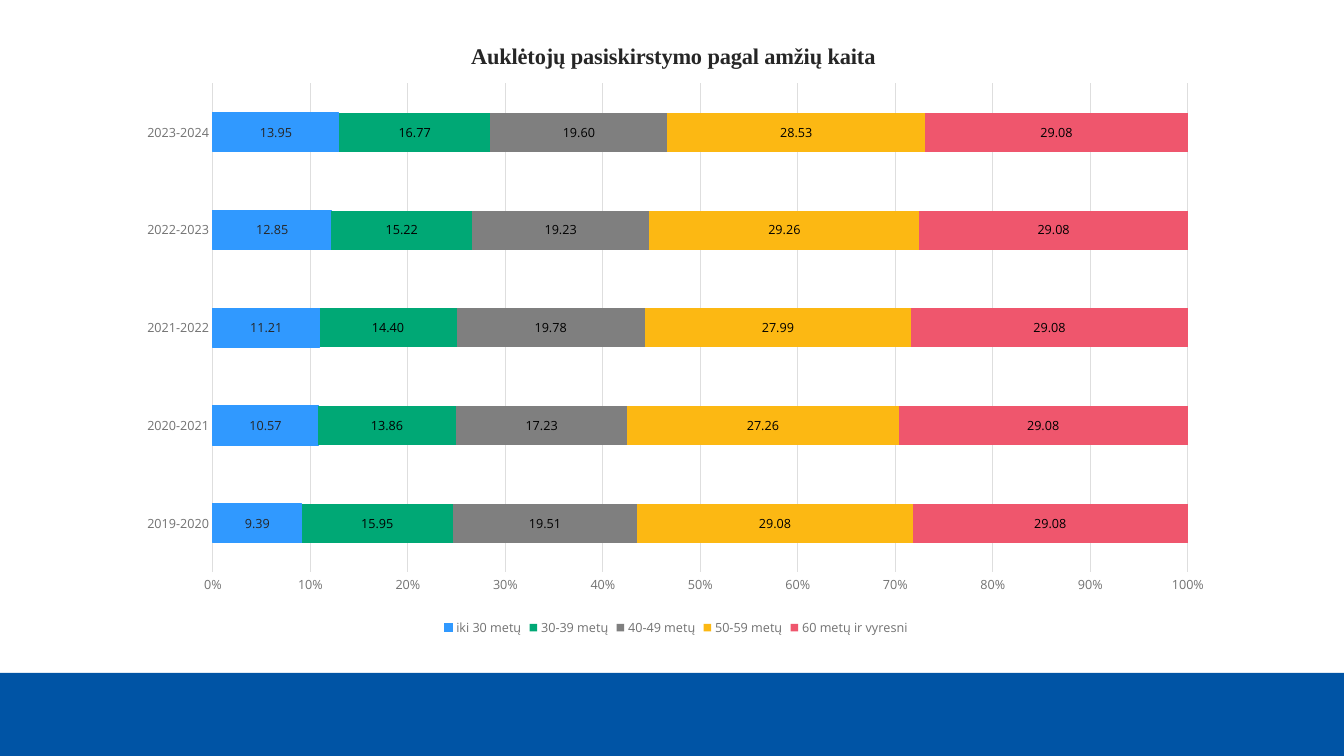
from lxml import etree
from pptx import Presentation
from pptx import util as u
from pptx.chart.data import CategoryChartData
from pptx.dml.color import RGBColor
from pptx.enum import chart as ch
from pptx.enum import shapes
from pptx.oxml.ns import qn

BLUE_BAND = RGBColor(0x00, 0x54, 0xA5)
INK = RGBColor(0x26, 0x26, 0x26)
BLACK = RGBColor(0x00, 0x00, 0x00)
MUTED = RGBColor(0x72, 0x72, 0x72)
GRID_LINE = RGBColor(0xDE, 0xDE, 0xDE)
SKY = RGBColor(0x30, 0x99, 0xFF)
GREEN = RGBColor(0x00, 0xA8, 0x75)
GREY = RGBColor(0x7F, 0x7F, 0x7F)
AMBER = RGBColor(0xFC, 0xB8, 0x13)
ROSE = RGBColor(0xEF, 0x56, 0x6D)

SCHOOL_YEARS = ["2019-2020", "2020-2021", "2021-2022", "2022-2023", "2023-2024"]
AGE_GROUPS = [
    ("iki 30 metų", SKY, INK, (9.39, 10.57, 11.21, 12.85, 13.95)),
    ("30-39 metų", GREEN, BLACK, (15.95, 13.86, 14.40, 15.22, 16.77)),
    ("40-49 metų", GREY, BLACK, (19.51, 17.23, 19.78, 19.23, 19.60)),
    ("50-59 metų", AMBER, BLACK, (29.08, 27.26, 27.99, 29.26, 28.53)),
    ("60 metų ir vyresni", ROSE, BLACK, (29.08,) * 5),
]


def apply(target, **values):
    for name, value in values.items():
        setattr(target, name, value)


def place(element, before, **shares):
    """Fix a chart part at shares of the chart's size, ahead of the first `before` tag found."""
    layout = etree.Element(qn("c:layout"))
    manual = etree.SubElement(layout, qn("c:manualLayout"))
    settings = {"xMode": "edge", "yMode": "edge", **shares}
    if "w" in shares:
        settings = {"layoutTarget": "inner", **settings}
    for tag, value in settings.items():
        etree.SubElement(manual, qn(f"c:{tag}")).set("val", str(value))
    for old in element.findall(qn("c:layout")):
        element.remove(old)
    next(child for child in element if child.tag == qn(before)).addprevious(layout)


class Deck:
    COLUMNS, ROWS = 32, 40
    BODY, HEADING = "Open Sans", "Times New Roman"

    def __init__(self):
        self.show = Presentation()
        apply(self.show, slide_width=u.Inches(13.33), slide_height=u.Inches(7.5))
        self.slide = self.show.slides.add_slide(self.show.slide_layouts[6])

    def box(self, column, row, columns, rows):
        across = self.show.slide_width / self.COLUMNS
        down = self.show.slide_height / self.ROWS
        return [u.Emu(round(n)) for n in
                (column * across, row * down, columns * across, rows * down)]

    def style(self, font, size, color, **more):
        apply(font, **{"name": self.BODY, "size": u.Pt(size), "bold": False, **more})
        font.color.rgb = color

    def stroke(self, line, color):
        line.color.rgb = color
        line.width = u.Pt(0.75)

    def band(self, cell, color):
        band = self.slide.shapes.add_shape(shapes.MSO_SHAPE.RECTANGLE, *self.box(*cell))
        band.shadow.inherit = False
        band.fill.solid()
        band.fill.fore_color.rgb = color
        band.line.fill.background()

    def share_chart(self, cell, title, categories, groups):
        data = CategoryChartData(number_format="0.00")
        data.categories = categories
        for name, _, _, values in groups:
            data.add_series(name, values)
        chart = self.slide.shapes.add_chart(
            ch.XL_CHART_TYPE.BAR_STACKED_100, *self.box(*cell), data).chart
        self.style(chart.font, 10, INK)
        self.chart_title(chart, title)
        self.axes(chart)
        self.bars(chart.plots[0], groups)
        chart.has_legend = True
        apply(chart.legend, position=ch.XL_LEGEND_POSITION.BOTTOM, include_in_layout=False)
        self.style(chart.legend.font, 9, MUTED)

    def chart_title(self, chart, title):
        chart.has_title = True
        heading = chart.chart_title.text_frame
        heading.text = title
        self.style(heading.paragraphs[0].runs[0].font, 16, INK, name=self.HEADING, bold=True)
        chart_part = chart.element.find(qn("c:chart"))
        place(chart_part.find(qn("c:title")), "c:overlay", x=0.31, y=0.03)
        place(chart_part.find(qn("c:plotArea")), "c:barChart",
              x=0.079, y=0.104, w=0.886, h=0.786)

    def axes(self, chart):
        years, shares = chart.category_axis, chart.value_axis
        for axis in (years, shares):
            apply(axis, major_tick_mark=ch.XL_TICK_MARK.NONE,
                  minor_tick_mark=ch.XL_TICK_MARK.NONE)
            self.style(axis.tick_labels.font, 9, MUTED)
        self.stroke(years.format.line, GRID_LINE)
        apply(shares, minimum_scale=0, maximum_scale=1, major_unit=0.1,
              has_major_gridlines=True)
        apply(shares.tick_labels, number_format="0%", number_format_is_linked=False)
        shares.format.line.fill.background()
        self.stroke(shares.major_gridlines.format.line, GRID_LINE)

    def bars(self, plot, groups):
        apply(plot, gap_width=150, overlap=100, vary_by_categories=False)
        for series, (_, color, label_color, _) in zip(plot.series, groups):
            series.format.fill.solid()
            series.format.fill.fore_color.rgb = color
            labels = series.data_labels
            apply(labels, show_value=True, number_format="0.00",
                  number_format_is_linked=False, position=ch.XL_LABEL_POSITION.CENTER)
            self.style(labels.font, 9, label_color)
        self.stroke(plot.series[0].format.line, groups[0][1])


def main():
    deck = Deck()
    deck.band((0, 35.6, 32, 4.4), BLUE_BAND)
    deck.share_chart((3, 1, 26.2, 32.9), "Auklėtojų pasiskirstymo pagal amžių kaita",
                     SCHOOL_YEARS, AGE_GROUPS)
    deck.show.save("out.pptx")


if __name__ == "__main__":
    main()
